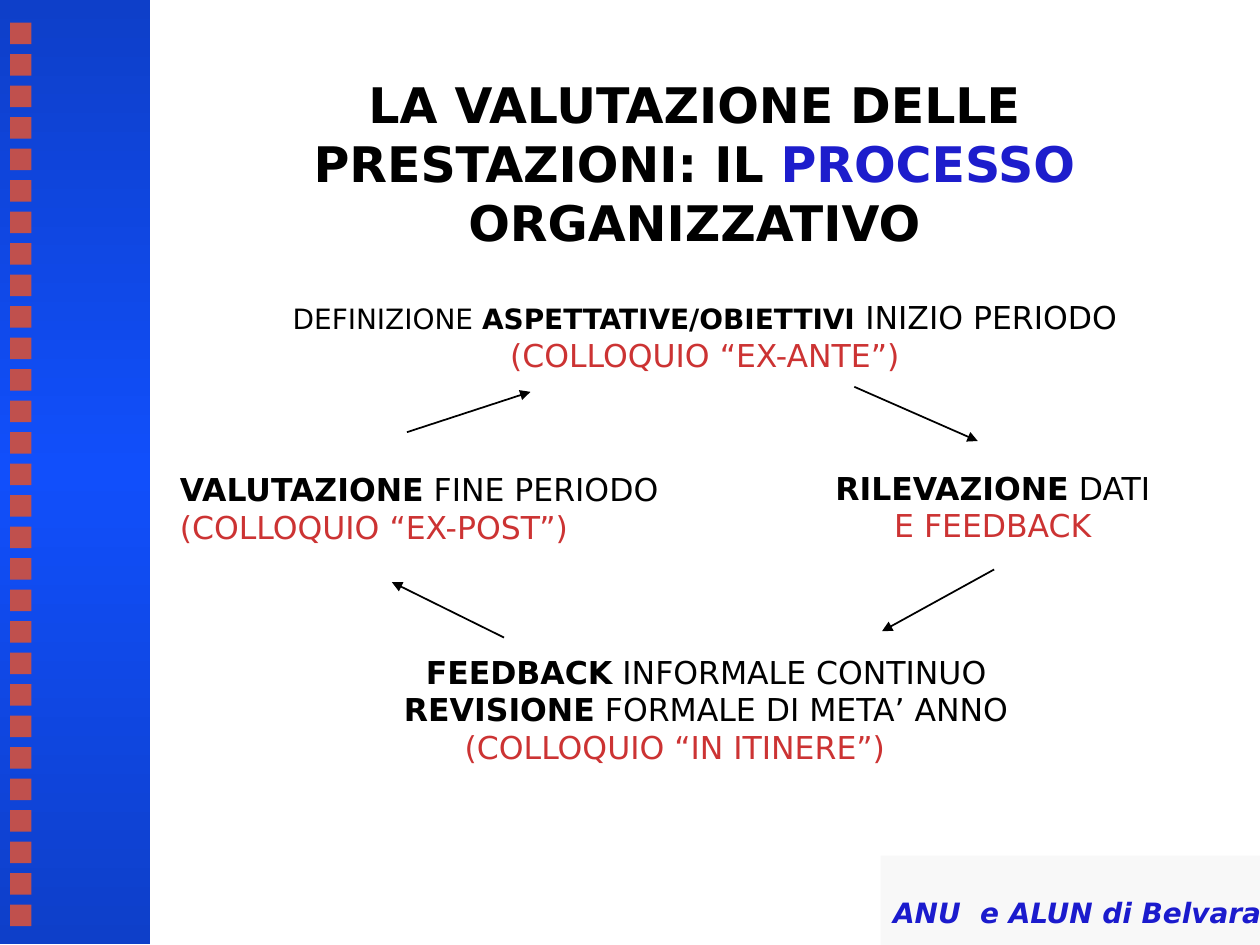
import copy
import pptx
import pptx.util
import pptx.dml.color
import pptx.enum.shapes
import pptx.enum.text
import pptx.oxml.ns
import lxml.etree

Inches = pptx.util.Inches
RGBColor = pptx.dml.color.RGBColor
RECT = pptx.enum.shapes.MSO_SHAPE.RECTANGLE
LINE = pptx.enum.shapes.MSO_CONNECTOR.STRAIGHT
MID = pptx.enum.text.PP_ALIGN.CENTER
LEFT = pptx.enum.text.PP_ALIGN.LEFT
TOP = pptx.enum.text.MSO_ANCHOR.TOP
HALF = pptx.enum.text.MSO_ANCHOR.MIDDLE

BLACK = RGBColor(0x00, 0x00, 0x00)
RED = RGBColor(0xCC, 0x33, 0x33)
BLUE = RGBColor(0x1D, 0x1D, 0xCC)
NAVY = RGBColor(0x1B, 0x1B, 0xCD)
BRICK = RGBColor(0xC0, 0x50, 0x4D)
PALE = RGBColor(0xF8, 0xF8, 0xF8)
EDGE = RGBColor(0x0E, 0x3F, 0xC9)
GLOW = RGBColor(0x11, 0x4F, 0xFB)


def write(para, text, size=18, color=BLACK, bold=False, slant=False, align=MID):
    para.alignment = align
    run = para.add_run()
    run.text = text
    run.font.name = "DejaVu Sans"
    run.font.size = pptx.util.Pt(size)
    run.font.color.rgb = color
    run.font.bold = bold
    run.font.italic = slant


def block(left, top, width, height, fill):
    shape = slide.shapes.add_shape(
        RECT, Inches(left), Inches(top), Inches(width), Inches(height))
    shape.shadow.inherit = False
    shape.line.fill.background()
    if fill:
        shape.fill.solid()
        shape.fill.fore_color.rgb = fill
    return shape


deck = pptx.Presentation()
deck.slide_width = Inches(10)
deck.slide_height = Inches(7.5)
slide = deck.slides.add_slide(deck.slide_layouts[5])

band = block(0, 0, 1.19, 7.49, None)
band.fill.gradient()
band.fill.gradient_angle = 90
stops = band.fill.gradient_stops
first = stops[0]._gs
first.addnext(copy.deepcopy(first))
for stop, color, place in zip(band.fill.gradient_stops, (EDGE, GLOW, EDGE), (0, 0.5, 1)):
    stop.color.rgb = color
    stop.position = place

for step in range(29):
    block(0.08, 0.18 + 0.25 * step, 0.17, 0.17, BRICK)

title = slide.shapes.title
title.left, title.top = Inches(1.29), Inches(0.67)
title.width, title.height = Inches(8.44), Inches(1.25)
title.text_frame.vertical_anchor = HALF
title.text_frame.word_wrap = True
head = title.text_frame.paragraphs[0]
write(head, "LA VALUTAZIONE DELLE PRESTAZIONI: IL ", size=28, bold=True)
write(head, "PROCESSO", size=28, bold=True, color=BLUE)
write(head, " ORGANIZZATIVO", size=28, bold=True)

strong = {"bold": True}
red = {"color": RED}
small = {"size": 16}
stages = [
    (1.33, 3.68, 4.16, 0.7, LEFT, [
        [("VALUTAZIONE", strong), (" FINE PERIODO", {})],
        [("(COLLOQUIO “EX-POST”)", red)]]),
    (1.98, 2.32, 7.23, 0.7, MID, [
        [("DEFINIZIONE ", small),
         ("ASPETTATIVE/OBIETTIVI", {"size": 16, "bold": True}),
         (" INIZIO PERIODO", {})],
        [("(COLLOQUIO “EX-ANTE”)", red)]]),
    (6.45, 3.67, 2.86, 0.7, MID, [
        [("RILEVAZIONE", strong), (" DATI", {})],
        [("E FEEDBACK", red)]]),
    (2.59, 5.13, 6.03, 1.16, MID, [
        [("FEEDBACK", strong), (" INFORMALE CONTINUO", {})],
        [("REVISIONE", strong), (" FORMALE DI META’ ANNO", {})],
        [("(COLLOQUIO “IN ITINERE”)", {"color": RED, "align": LEFT})]]),
]
for left, top, width, height, align, lines in stages:
    box = slide.shapes.add_textbox(
        Inches(left), Inches(top), Inches(width), Inches(height))
    frame = box.text_frame
    frame.word_wrap = True
    for count, line in enumerate(lines):
        para = frame.add_paragraph() if count else frame.paragraphs[0]
        for text, form in line:
            write(para, text, **{"align": align, **form})
para._p.get_or_add_pPr().set("marL", str(Inches(1)))

arrows = [
    (3.23, 3.43, 4.21, 3.11),
    (6.78, 3.07, 7.76, 3.5),
    (4, 5.06, 3.11, 4.62),
    (7.89, 4.52, 7, 5.01),
]
for ends in arrows:
    arrow = slide.shapes.add_connector(LINE, *[Inches(end) for end in ends])
    arrow.line.color.rgb = BLACK
    arrow.line.width = pptx.util.Pt(1)
    tip = lxml.etree.SubElement(
        arrow.line._get_or_add_ln(), pptx.oxml.ns.qn("a:tailEnd"))
    tip.set("type", "triangle")
    lxml.etree.SubElement(
        arrow._element.spPr, pptx.oxml.ns.qn("a:effectLst"))

foot = block(6.99, 6.79, 3.44, 0.91, PALE)
foot.text_frame.word_wrap = True
foot.text_frame.vertical_anchor = TOP
foot.text_frame.margin_top = Inches(0.32)
write(foot.text_frame.paragraphs[0], "ANU  e ALUN di Belvara",
      size=16, color=NAVY, bold=True, slant=True, align=LEFT)

deck.save("out.pptx")
